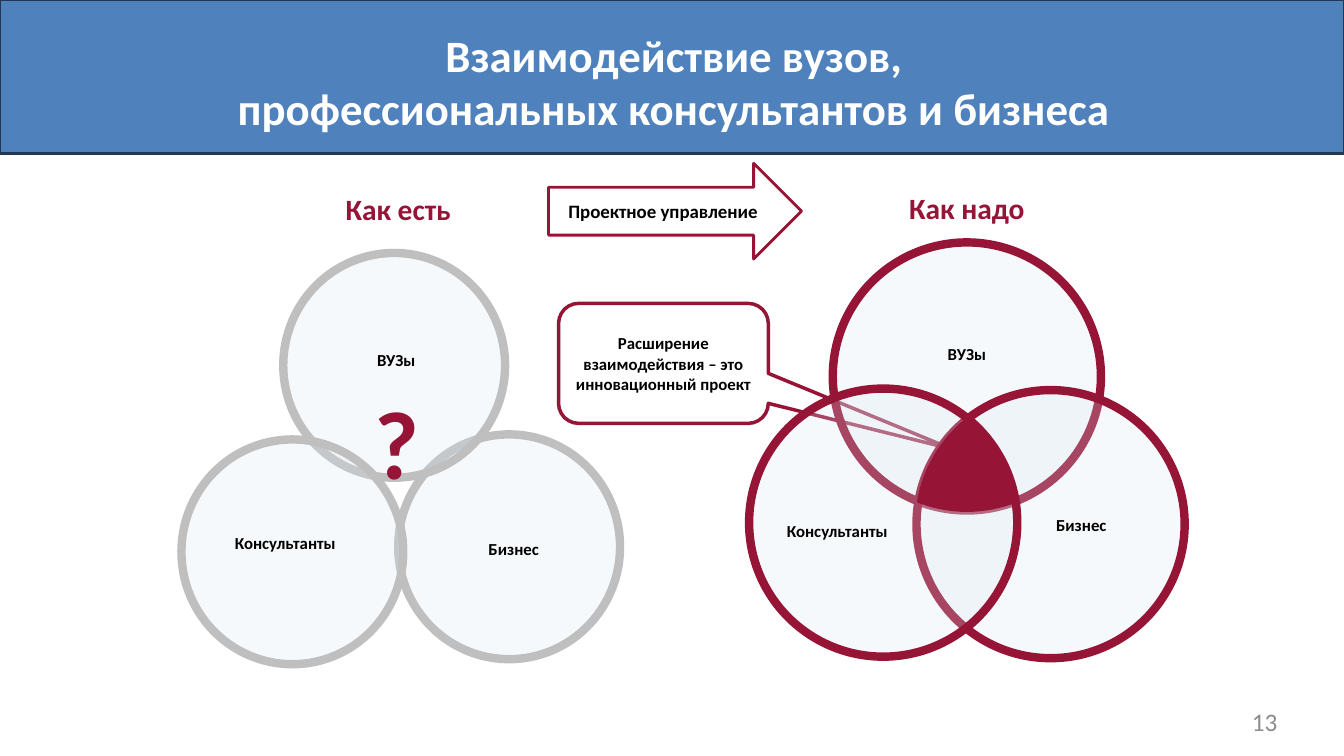
import math
from lxml import etree
from pptx import Presentation
from pptx.dml.color import RGBColor
from pptx.enum.shapes import MSO_SHAPE
from pptx.enum.text import MSO_ANCHOR, PP_ALIGN
from pptx.oxml.ns import qn
from pptx.util import Emu, Inches, Pt

RECT, RING = MSO_SHAPE.RECTANGLE, MSO_SHAPE.FLOWCHART_CONNECTOR
CALLOUT, ARROW = MSO_SHAPE.ROUNDED_RECTANGULAR_CALLOUT, MSO_SHAPE.RIGHT_ARROW
LEFT, CENTER, RIGHT = PP_ALIGN.LEFT, PP_ALIGN.CENTER, PP_ALIGN.RIGHT
TOP, MIDDLE = MSO_ANCHOR.TOP, MSO_ANCHOR.MIDDLE

CELL = Inches(0.1)  # square grid of 133.3 columns by 75 rows
COLS, ROWS = 133.3, 75
FONT = "Calibri"
WINE, GREY, BLUE, NAVY = "961436", "BFBFBF", "4F81BD", "233953"
PALE, WHITE, BLACK, DIM = "DCE6F2", "FFFFFF", "000000", "8C8C8C"


def grid(*cells):
    return [Emu(round(n * CELL)) for n in cells]


def color(code):
    return RGBColor.from_string(code)


def paint(shape, fill, line, width, alpha=None):
    shape.shadow.inherit = False
    shape.fill.solid()
    shape.fill.fore_color.rgb = color(fill)
    if alpha:
        tint = shape.fill._xPr.find(qn("a:solidFill"))[0]
        etree.SubElement(tint, qn("a:alpha")).set("val", str(alpha * 1000))
    shape.line.color.rgb = color(line)
    shape.line.width = Pt(width)


def write(shape, lines, size, ink, bold=True, align=CENTER, anchor=MIDDLE):
    frame = shape.text_frame
    frame.word_wrap = True
    frame.vertical_anchor = anchor
    for i, line in enumerate(lines):
        para = frame.add_paragraph() if i else frame.paragraphs[0]
        para.alignment = align
        run = para.add_run()
        run.text = line
        run.font.name = FONT
        run.font.size = Pt(size)
        run.font.bold = bold
        run.font.color.rgb = color(ink)


def block(slide, kind, box, fill, line, width, alpha=None):
    shape = slide.shapes.add_shape(kind, *grid(*box))
    paint(shape, fill, line, width, alpha)
    return shape


def label(slide, box, lines, size, ink, inset=True, **style):
    shape = slide.shapes.add_textbox(*grid(*box))
    if not inset:
        frame = shape.text_frame
        frame.margin_left = frame.margin_right = 0
        frame.margin_top = frame.margin_bottom = 0
    write(shape, lines, size, ink, **style)


def rings(slide, mids, wide, high, line):
    for x, y in mids:
        box = (x - wide / 2, y - high / 2, wide, high)
        block(slide, RING, box, PALE, line, 6, alpha=24)


def names(slide, spots):
    for text, (x, y, wide) in zip(("ВУЗы", "Бизнес", "Консультанты"), spots):
        label(slide, (x, y, wide, 3.7), [text], 12, BLACK, anchor=TOP)


def cross(a, b, inner, radius):
    """Meeting point of two circles that lies nearer to a third centre."""
    gap = math.dist(a, b)
    rise = math.sqrt(radius ** 2 - gap ** 2 / 4) / gap
    mid = ((a[0] + b[0]) / 2, (a[1] + b[1]) / 2)
    dx, dy = (b[0] - a[0]) * rise, (b[1] - a[1]) * rise
    ends = [(mid[0] - dy, mid[1] + dx), (mid[0] + dy, mid[1] - dx)]
    return min(ends, key=lambda end: math.dist(end, inner))


def arc(mid, start, end, radius, steps=16):
    first, last = (math.atan2(p[1] - mid[1], p[0] - mid[0]) for p in (start, end))
    turn = math.remainder(last - first, math.tau)
    for i in range(steps):
        angle = first + turn * i / steps
        yield grid(mid[0] + radius * math.cos(angle),
                   mid[1] + radius * math.sin(angle))


def core(slide, mids, radius):
    top, right, left = mids
    peak = cross(left, right, top, radius)
    east = cross(top, left, right, radius)
    west = cross(top, right, left, radius)
    dots = [*arc(left, peak, east, radius), *arc(top, east, west, radius),
            *arc(right, west, peak, radius)]
    pen = slide.shapes.build_freeform(*dots[0])
    pen.add_line_segments(dots[1:], close=True)
    paint(pen.convert_to_shape(), WINE, WINE, 2)


def main():
    deck = Presentation()
    deck.slide_width, deck.slide_height = grid(COLS, ROWS)
    slide = deck.slides.add_slide(deck.slide_layouts[6])

    # Title band
    block(slide, RECT, (0, 0, COLS, 15.2), BLUE, NAVY, 2)
    label(slide, (0.2, 2, COLS, 12.1),
          ["Взаимодействие вузов,", "профессиональных консультантов и бизнеса"],
          32, WHITE, inset=False)

    # Callout, under the rings
    note = block(slide, CALLOUT, (55.4, 30.1, 20.8, 11.9), WHITE, WINE, 2.5)
    note.adjustments[0], note.adjustments[1] = 1.377, 0.715
    write(note, ["Расширение взаимодействия – это инновационный проект"], 12, BLACK)

    # Present state
    label(slide, (31.5, 18.5, 16, 5.6), ["Как есть"], 21, WINE, anchor=TOP)
    rings(slide, [(50.5, 54.25), (39.1, 36.25), (29, 54.75)], 22, 22.3, GREY)
    names(slide, [(30.9, 34.2, 16.8), (40.7, 53, 20.5), (20.2, 52.4, 16.2)])
    label(slide, (36.2, 37.5, 4.1, 15.5), ["?"], 69, WINE, align=LEFT, anchor=TOP)

    # Desired state
    label(slide, (86.8, 18.4, 18.2, 5.6), ["Как надо"], 21, WINE, anchor=TOP)
    mids = [(95.9, 37.35), (104.2, 52), (87.6, 51.85)]
    rings(slide, mids, 26.6, 26.6, WINE)
    names(slide, [(87.5, 33.6, 16.8), (97, 50.6, 20.5), (75.1, 51.2, 15.9)])
    core(slide, mids, 13.3)

    # Arrow between the states
    arrow = block(slide, ARROW, (54.4, 16.2, 25.1, 9.5), WHITE, WINE, 2)
    write(arrow, ["Проектное управление"], 13.5, BLACK)

    # Page number
    label(slide, (96, 69.7, 30.7, 3.8), ["13"], 18, DIM, inset=False,
          bold=False, align=RIGHT)

    deck.save("out.pptx")


if __name__ == "__main__":
    main()
